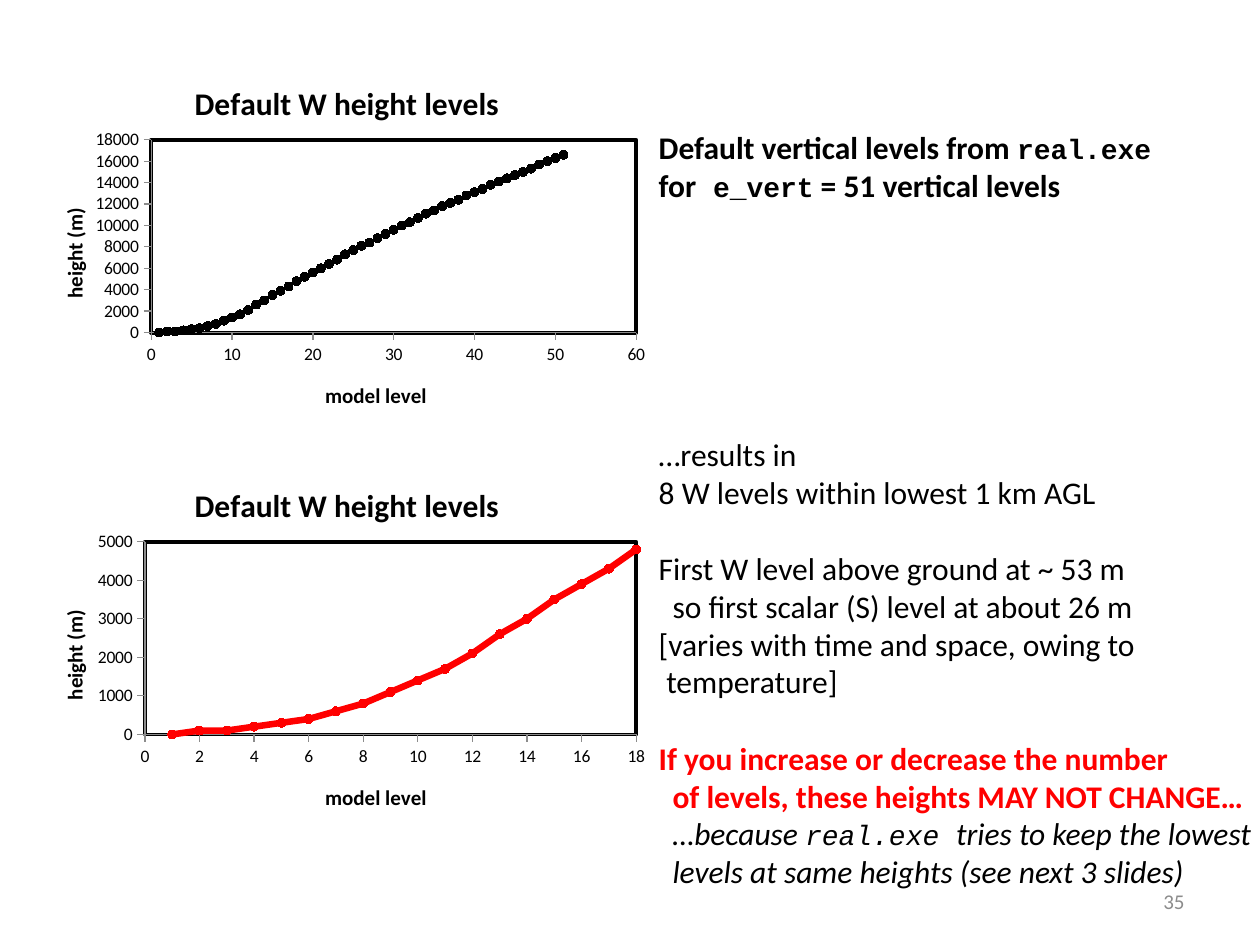
import pptx
import pptx.util
import pptx.chart.data
import pptx.dml.color
import pptx.enum.chart
import pptx.enum.text
import pptx.oxml
import pptx.oxml.ns
from dataclasses import dataclass
from pptx.util import Inches


@dataclass
class Theme:
    black = pptx.dml.color.RGBColor(0, 0, 0)
    white = pptx.dml.color.RGBColor(255, 255, 255)
    red = pptx.dml.color.RGBColor(255, 0, 0)
    gray = pptx.dml.color.RGBColor(0x8C, 0x8C, 0x8C)
    font = "Calibri"
    code_font = "Courier New"
    body = pptx.util.Pt(18)
    code = pptx.util.Pt(16)
    small = pptx.util.Pt(12)
    tick = pptx.util.Pt(10)


theme = Theme()


def set_layout(parent, index, target=None, **fractions):
    """Place a chart part by fractions of the chart area."""
    qn = pptx.oxml.ns.qn
    old = parent.find(qn("c:layout"))
    if old is not None:
        parent.remove(old)
    target_xml = f'<c:layoutTarget val="{target}"/>' if target else ""
    modes = '<c:xMode val="edge"/><c:yMode val="edge"/>'
    values = "".join(f'<c:{name} val="{value}"/>' for name, value in fractions.items())
    parent.insert(index, pptx.oxml.parse_xml(
        f'<c:layout {pptx.oxml.ns.nsdecls("c")}><c:manualLayout>'
        f'{target_xml}{modes}{values}</c:manualLayout></c:layout>'))


def set_title(title, text, size, x, y):
    """Write a bold chart or axis title and place it."""
    paragraph = title.text_frame.paragraphs[0]
    paragraph.text = text
    paragraph.font.size = size
    paragraph.font.bold = True
    paragraph.font.name = theme.font
    paragraph.font.color.rgb = theme.black
    set_layout(title.element, 1, x=x, y=y)


presentation = pptx.Presentation()
presentation.slide_width = Inches(10)
presentation.slide_height = Inches(7.5)
slide = presentation.slides.add_slide(presentation.slide_layouts[6])

# Slide number
number_box = slide.shapes.add_textbox(Inches(7.17), Inches(6.95), Inches(2.33), Inches(0.4))
number_box.text_frame.word_wrap = True
number_box.text_frame.vertical_anchor = pptx.enum.text.MSO_ANCHOR.MIDDLE
paragraph = number_box.text_frame.paragraphs[0]
paragraph.text = "35"
paragraph.alignment = pptx.enum.text.PP_ALIGN.RIGHT
paragraph.font.size = theme.small
paragraph.font.name = theme.font
paragraph.font.color.rgb = theme.gray

# Commentary: lines gap before, indent, colour, bold, italic, text; odd parts between | are code
line_height = 22
commentary = [
    (0, 0, theme.black, True, False, "Default vertical levels from |real.exe"),
    (0, 0, theme.black, True, False, "for| e_vert| = 51 vertical levels"),
    (6, 0, theme.black, False, False, "…results in"),
    (0, 0, theme.black, False, False, "8 W levels within lowest 1 km AGL"),
    (1, 0, theme.black, False, False, "First W level above ground at ~ 53 m"),
    (0, 0.11, theme.black, False, False, "so first scalar (S) level at about 26 m"),
    (0, 0, theme.black, False, False, "[varies with time and space, owing to"),
    (0, 0.06, theme.black, False, False, "temperature]"),
    (1, 0, theme.red, True, False, "If you increase or decrease the number"),
    (0, 0.11, theme.red, True, False, "of levels, these heights MAY NOT CHANGE…"),
    (0, 0.11, theme.black, False, True, "…because |real.exe |tries to keep the lowest"),
    (0, 0.11, theme.black, False, True, "levels at same heights (see next 3 slides)"),
]
commentary_box = slide.shapes.add_textbox(Inches(5.13), Inches(0.97), Inches(4.97), Inches(6.16))
text_frame = commentary_box.text_frame
text_frame.word_wrap = False
text_frame.auto_size = pptx.enum.text.MSO_AUTO_SIZE.SHAPE_TO_FIT_TEXT
for row, (gap, indent, color, bold, italic, text) in enumerate(commentary):
    paragraph = text_frame.add_paragraph() if row else text_frame.paragraphs[0]
    paragraph.space_before = pptx.util.Pt(gap * line_height)
    if indent:
        paragraph._p.get_or_add_pPr().set("marL", str(Inches(indent)))
    paragraph.font.bold = bold
    paragraph.font.italic = italic
    paragraph.font.color.rgb = color
    for part, piece in enumerate(text.split("|")):
        run = paragraph.add_run()
        run.text = piece
        run.font.name = theme.code_font if part % 2 else theme.font
        run.font.size = theme.code if part % 2 else theme.body

# Height of each model level, in metres, from level 1
heights = [
    0, 100, 100, 200, 300, 400, 600, 800, 1100, 1400, 1700, 2100, 2600, 3000, 3500, 3900, 4300,
    4800, 5200, 5600, 6000, 6400, 6800, 7300, 7700, 8100, 8400, 8800, 9200, 9600, 10000, 10300,
    10700, 11100, 11400, 11800, 12100, 12400, 12800, 13100, 13400, 13800, 14100, 14400, 14700,
    15000, 15300, 15700, 16000, 16300, 16600,
]

# Charts: top, type, colour, line width, (max, step) across, (max, step) up, plot left, plot width
chart_types = pptx.enum.chart.XL_CHART_TYPE
charts = [
    (0.42, chart_types.XY_SCATTER, theme.black, None, (60, 10), (18000, 2000), 0.2, 0.77),
    (3.61, chart_types.XY_SCATTER_LINES, theme.red, 3.75, (18, 2), (5000, 1000), 0.19, 0.78),
]
for top, chart_type, color, line_width, across, up, plot_left, plot_width in charts:
    chart_data = pptx.chart.data.XyChartData()
    data_series = chart_data.add_series("Series 1")
    for level, height in enumerate(heights, start=1):
        data_series.add_data_point(level, height)
    chart = slide.shapes.add_chart(
        chart_type, Inches(0.2), Inches(top), Inches(5), Inches(3), chart_data).chart
    chart.has_legend = False
    chart.font.name = theme.font
    chart.font.size = theme.tick
    chart.font.color.rgb = theme.black
    chart.plots[0].vary_by_categories = False

    # Titles and axes
    set_title(chart.chart_title, "Default W height levels", theme.body, 0.26, 0.06)
    for axis, (maximum, step), title, x, y in (
        (chart.category_axis, across, "model level", 0.47, 0.86),
        (chart.value_axis, up, "height (m)", 0.05, 0.4),
    ):
        axis.has_major_gridlines = False
        axis.minimum_scale = 0
        axis.maximum_scale = maximum
        axis.major_unit = step
        axis.major_tick_mark = pptx.enum.chart.XL_TICK_MARK.OUTSIDE
        axis.tick_labels.number_format = "General"
        axis.tick_labels.number_format_is_linked = False
        axis.format.line.color.rgb = theme.gray
        set_title(axis.axis_title, title, theme.small, x, y)
    body_properties = chart.value_axis.axis_title.text_frame._txBody.bodyPr
    body_properties.set("rot", "-5400000")
    body_properties.set("vert", "horz")

    # Series
    series = chart.plots[0].series[0]
    series.smooth = False
    if line_width:
        series.format.line.color.rgb = color
        series.format.line.width = pptx.util.Pt(line_width)
    else:
        series.format.line.fill.background()
    series.marker.style = pptx.enum.chart.XL_MARKER_STYLE.CIRCLE
    series.marker.size = 5
    series.marker.format.fill.solid()
    series.marker.format.fill.fore_color.rgb = color
    series.marker.format.line.color.rgb = color

    # Plot frame
    plot_area = chart.element.find(".//" + pptx.oxml.ns.qn("c:plotArea"))
    set_layout(plot_area, 0, "inner", x=plot_left, y=0.23, w=plot_width, h=0.51)
    plot_area.append(pptx.oxml.parse_xml(
        f'<c:spPr {pptx.oxml.ns.nsdecls("c", "a")}>'
        f'<a:solidFill><a:srgbClr val="{theme.white}"/></a:solidFill>'
        f'<a:ln w="{pptx.util.Pt(2.25)}"><a:solidFill><a:srgbClr val="{theme.black}"/>'
        '</a:solidFill></a:ln></c:spPr>'))

presentation.save("out.pptx")
